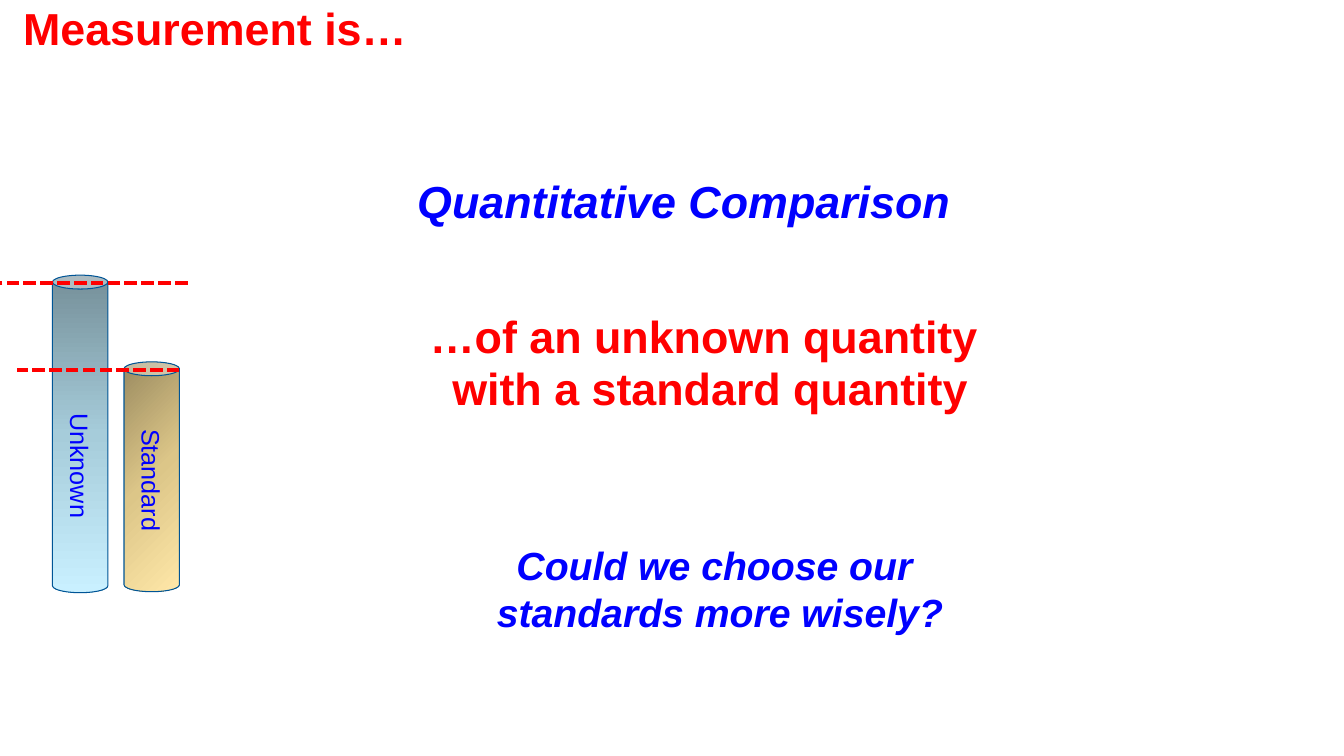
from copy import deepcopy
from dataclasses import dataclass

from pptx import Presentation
from pptx.dml.color import RGBColor
from pptx.enum.dml import MSO_LINE_DASH_STYLE as DASH
from pptx.enum.shapes import MSO_CONNECTOR, MSO_SHAPE
from pptx.enum.text import MSO_ANCHOR, PP_ALIGN
from pptx.oxml.ns import qn
from pptx.oxml.xmlchemy import OxmlElement
from pptx.util import Inches, Pt

RED, BLUE, OUTLINE = "FF0000", "0000FF", "005596"


@dataclass
class TextBlock:
    box: tuple[float, float, float, float]
    lines: list[str]
    color: str
    size: int = 32
    italic: bool = False
    align: PP_ALIGN = PP_ALIGN.LEFT
    indent: float = 0
    spacing: float = 0.8
    fill: str | None = None


@dataclass
class Cylinder:
    label: str
    box: tuple[float, float, float, float]
    stops: tuple[str, str, str]
    angle: int  # counter-clockwise degrees
    indent: float = 0


@dataclass
class LevelLine:
    start: float
    end: float
    y: float


TEXTS = [
    TextBlock((1.75, 3.12, 9.61, 2.44),
              ["…of an unknown quantity ", "with a standard quantity"],
              RED, align=PP_ALIGN.CENTER, indent=0.98),
    TextBlock((0.13, 0.06, 10.32, 0.63), ["Measurement is…"], RED, fill="FFFFFF"),
    TextBlock((4.04, 1.78, 6.03, 0.79), ["Quantitative Comparison"], BLUE, italic=True),
    TextBlock((4.04, 5.32, 6.2, 1.04),
              ["Could we choose our \vstandards more wisely?"],
              BLUE, size=28, italic=True, align=PP_ALIGN.CENTER, spacing=1.0),
]
CYLINDERS = [
    Cylinder("Standard", (1.23, 3.59, 0.55, 2.28), ("9B8B60", "DCC688", "FFE7A8"), 315),
    Cylinder("Unknown", (0.52, 2.73, 0.55, 3.15), ("758F99", "A6CCDA", "C9F0FF"), 270,
             indent=0.56),
]
LEVELS = [LevelLine(1.78, 0.17, 3.67), LevelLine(1.86, -0.01, 2.81)]


def rgb(color: str) -> RGBColor:
    return RGBColor.from_string(color)


def style(p, size: int, color: str, align: PP_ALIGN, indent: float) -> None:
    p.alignment = align
    p._p.get_or_add_pPr().set("marL", str(Inches(indent)))
    p.font.name, p.font.size = "Arial", Pt(size)
    p.font.color.rgb = rgb(color)


def add_text(slide, block: TextBlock) -> None:
    box = map(Inches, block.box)
    if block.fill:
        sp = slide.shapes.add_shape(MSO_SHAPE.RECTANGLE, *box)
        sp.shadow.inherit = False
        sp.fill.solid()
        sp.fill.fore_color.rgb = rgb(block.fill)
        sp.line.fill.background()
    else:
        sp = slide.shapes.add_textbox(*box)
    tf = sp.text_frame
    tf.word_wrap = True
    tf.vertical_anchor = MSO_ANCHOR.TOP
    for i, line in enumerate(block.lines):
        p = tf.add_paragraph() if i else tf.paragraphs[0]
        p.text = line
        style(p, block.size, block.color, block.align, block.indent)
        p.font.bold, p.font.italic = True, block.italic
        p.line_spacing = block.spacing
        if i:
            p.space_before = Pt(0.2 * block.size)


def add_cylinder(slide, can: Cylinder) -> None:
    sp = slide.shapes.add_shape(MSO_SHAPE.CAN, *map(Inches, can.box))
    sp.shadow.inherit = False
    sp.line.color.rgb, sp.line.width = rgb(OUTLINE), Pt(0.75)
    # Three-stop gradient: the middle stop is added to the default two
    sp.fill.gradient()
    sp.fill.gradient_angle = can.angle
    first = sp._element.spPr.find(f".//{qn('a:gs')}")
    first.addnext(deepcopy(first))
    for i, (stop, color) in enumerate(zip(sp.fill.gradient_stops, can.stops)):
        stop.position, stop.color.rgb = i / 2, rgb(color)
    # Label reading downwards
    tf = sp.text_frame
    tf._txBody.bodyPr.set("vert", "vert")
    tf.vertical_anchor = MSO_ANCHOR.MIDDLE
    p = tf.paragraphs[0]
    p.text = can.label
    style(p, 18, BLUE, PP_ALIGN.CENTER, can.indent)


def add_level(slide, level: LevelLine) -> None:
    y = Inches(level.y)
    line = slide.shapes.add_connector(
        MSO_CONNECTOR.STRAIGHT, Inches(level.start), y, Inches(level.end), y)
    line.line.color.rgb, line.line.width = rgb(RED), Pt(3)
    line.line.dash_style = DASH.SQUARE_DOT
    line._element.spPr.append(OxmlElement("a:effectLst"))


def main() -> None:
    prs = Presentation()
    prs.slide_width, prs.slide_height = Inches(13.33), Inches(7.5)
    slide = prs.slides.add_slide(prs.slide_layouts[6])
    for block in TEXTS:
        add_text(slide, block)
    for can in CYLINDERS:
        add_cylinder(slide, can)
    for level in LEVELS:
        add_level(slide, level)
    prs.save("out.pptx")


if __name__ == "__main__":
    main()
